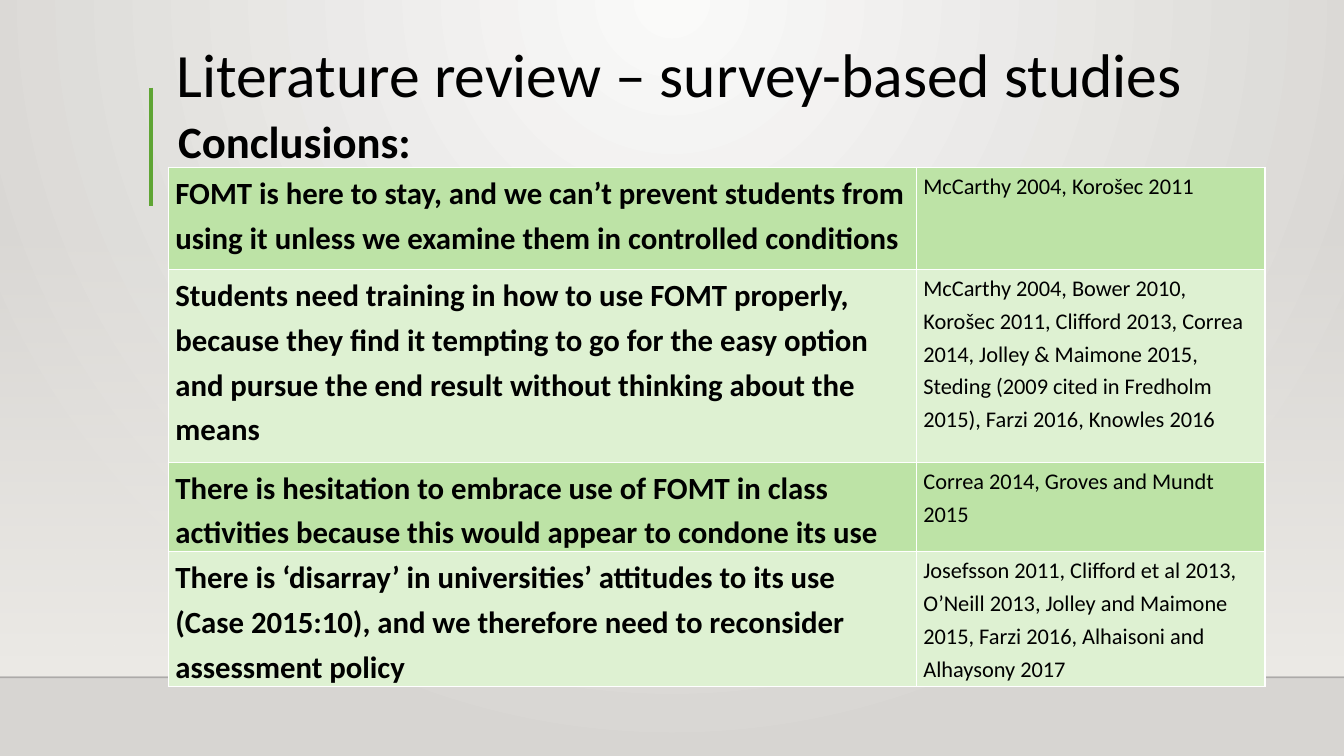
from typing import NamedTuple

from lxml import etree
from pptx import Presentation
from pptx.dml.color import RGBColor
from pptx.enum.shapes import MSO_CONNECTOR, MSO_SHAPE
from pptx.enum.text import MSO_ANCHOR
from pptx.oxml import parse_xml
from pptx.oxml.ns import nsdecls, qn
from pptx.util import Cm, Pt

STRAIGHT = MSO_CONNECTOR.STRAIGHT
RECTANGLE = MSO_SHAPE.RECTANGLE
TOP, BOTTOM = MSO_ANCHOR.TOP, MSO_ANCHOR.BOTTOM

FONT = "Calibri"
BLACK, WHITE = "000000", "FFFFFF"
ROW_FILLS = ("BDE3A6", "DEF1D2")
PAGE_WIDTH, PAGE_HEIGHT = 33.87, 19.05
TABLE_LEFT, TABLE_TOP = 4.24, 4.22
COLUMN_WIDTHS = (18.85, 8.79)


class Rule(NamedTuple):
    x1: float
    y1: float
    x2: float
    y2: float
    color: str
    points: float
    opacity: int = 100


class Heading(NamedTuple):
    text: str
    left: float
    top: float
    width: float
    height: float
    size: int
    bold: bool
    spacing: float
    anchor: MSO_ANCHOR


class Finding(NamedTuple):
    conclusion: str
    sources: str
    height: float


RULES = (
    Rule(0, 17.07, PAGE_WIDTH, 17.07, "000001", 1, 20),
    Rule(3.81, 2.21, 3.81, 5.18, "5FA534", 3),
)
HEADINGS = (
    Heading("Literature review – survey-based studies", 4.19, 0, 26.44, 2.92, 44, False, 0.9, BOTTOM),
    Heading("Conclusions:", 4.24, 2.46, 26.44, 12.98, 32, True, 1.2, TOP),
)
FINDINGS = (
    Finding(
        "FOMT is here to stay, and we can’t prevent students from using it "
        "unless we examine them in controlled conditions",
        "McCarthy 2004, Korošec 2011",
        2.57,
    ),
    Finding(
        "Students need training in how to use FOMT properly, because they find it tempting "
        "to go for the easy option and pursue the end result without thinking about the means",
        "McCarthy 2004, Bower 2010, Korošec 2011, Clifford 2013, Correa 2014, "
        "Jolley & Maimone 2015, Steding (2009 cited in Fredholm 2015), Farzi 2016, Knowles 2016",
        4.86,
    ),
    Finding(
        "There is hesitation to embrace use of FOMT in class activities "
        "because this would appear to condone its use",
        "Correa 2014, Groves and Mundt 2015",
        2.25,
    ),
    Finding(
        "There is ‘disarray’ in universities’ attitudes to its use (Case 2015:10), "
        "and we therefore need to reconsider assessment policy",
        "Josefsson 2011, Clifford et al 2013, O’Neill 2013, Jolley and Maimone 2015, "
        "Farzi 2016, Alhaisoni and Alhaysony 2017",
        3.4,
    ),
)


def rgb(color: str) -> RGBColor:
    return RGBColor.from_string(color)


def replace_solid_fill(properties, stops: str, direction: str) -> None:
    """Swap the solid fill among the properties for a gradient."""
    gradient = parse_xml(
        f'<a:gradFill {nsdecls("a")} rotWithShape="1"><a:gsLst>{stops}</a:gsLst>{direction}</a:gradFill>'
    )
    properties.replace(properties.find(qn("a:solidFill")), gradient)


def gradient_stop(position: int, color: str, opacity: int = 100) -> str:
    return (
        f'<a:gs pos="{position * 1000}"><a:srgbClr val="{color}">'
        f'<a:alpha val="{opacity * 1000}"/></a:srgbClr></a:gs>'
    )


def paint_backdrop(page) -> None:
    page.background.fill.solid()
    replace_solid_fill(
        page.element.xpath(".//p:bgPr")[0],
        gradient_stop(0, "FAFAF9") + gradient_stop(100, "D7D5D2"),
        '<a:path path="circle"><a:fillToRect l="43000" t="0" r="43000" b="100000"/></a:path>',
    )
    wall = page.shapes.add_shape(RECTANGLE, 0, Cm(5.59), Cm(PAGE_WIDTH), Cm(11.43))
    wall.shadow.inherit = False
    wall.line.fill.background()
    wall.fill.solid()
    replace_solid_fill(
        wall.element.spPr,
        gradient_stop(0, "EDEBE7", 0) + gradient_stop(100, "EDEBE7"),
        '<a:lin ang="5400000" scaled="0"/>',
    )


def draw_rule(page, rule: Rule) -> None:
    line = page.shapes.add_connector(STRAIGHT, Cm(rule.x1), Cm(rule.y1), Cm(rule.x2), Cm(rule.y2))
    line.line.width = Pt(rule.points)
    line.line.color.rgb = rgb(rule.color)
    properties = line.element.spPr
    etree.SubElement(properties, qn("a:effectLst"))
    if rule.opacity < 100:
        color = properties.find(".//" + qn("a:srgbClr"))
        etree.SubElement(color, qn("a:alpha"), val=str(rule.opacity * 1000))


def write(frame, text: str, size: int, bold: bool, spacing: float) -> None:
    frame.word_wrap = True
    para = frame.paragraphs[0]
    para.line_spacing = spacing
    span = para.add_run()
    span.text = text
    span.font.name = FONT
    span.font.size = Pt(size)
    span.font.bold = bold
    span.font.color.rgb = rgb(BLACK)


def draw_heading(page, heading: Heading) -> None:
    box = page.shapes.add_textbox(
        Cm(heading.left), Cm(heading.top), Cm(heading.width), Cm(heading.height)
    )
    box.text_frame.vertical_anchor = heading.anchor
    write(box.text_frame, heading.text, heading.size, heading.bold, heading.spacing)


def format_cell(cell, fill: str) -> None:
    cell.margin_left = cell.margin_right = Cm(0.18)
    cell.margin_top = cell.margin_bottom = 0
    cell.fill.solid()
    cell.fill.fore_color.rgb = rgb(fill)
    properties = cell._tc.get_or_add_tcPr()
    for index, side in enumerate("LRTB"):
        border = parse_xml(
            f'<a:ln{side} {nsdecls("a")} w="{Pt(1)}"><a:solidFill>'
            f'<a:srgbClr val="{WHITE}"/></a:solidFill></a:ln{side}>'
        )
        properties.insert(index, border)


def draw_findings(page) -> None:
    table = page.shapes.add_table(
        len(FINDINGS), len(COLUMN_WIDTHS), Cm(TABLE_LEFT), Cm(TABLE_TOP),
        Cm(sum(COLUMN_WIDTHS)), Cm(sum(finding.height for finding in FINDINGS)),
    ).table
    table.first_row = table.horz_banding = False
    for column, width in zip(table.columns, COLUMN_WIDTHS):
        column.width = Cm(width)
    for index, (row, finding) in enumerate(zip(table.rows, FINDINGS)):
        row.height = Cm(finding.height)
        conclusion, sources = row.cells
        for cell in (conclusion, sources):
            format_cell(cell, ROW_FILLS[index % 2])
        write(conclusion.text_frame, finding.conclusion, 22, True, 1.2)
        write(sources.text_frame, finding.sources, 16, False, 1.2)


def main() -> None:
    deck = Presentation()
    deck.slide_width, deck.slide_height = Cm(PAGE_WIDTH), Cm(PAGE_HEIGHT)
    page = deck.slides.add_slide(deck.slide_layouts[6])
    paint_backdrop(page)
    for rule in RULES:
        draw_rule(page, rule)
    for heading in HEADINGS:
        draw_heading(page, heading)
    draw_findings(page)
    deck.save("out.pptx")


if __name__ == "__main__":
    main()
